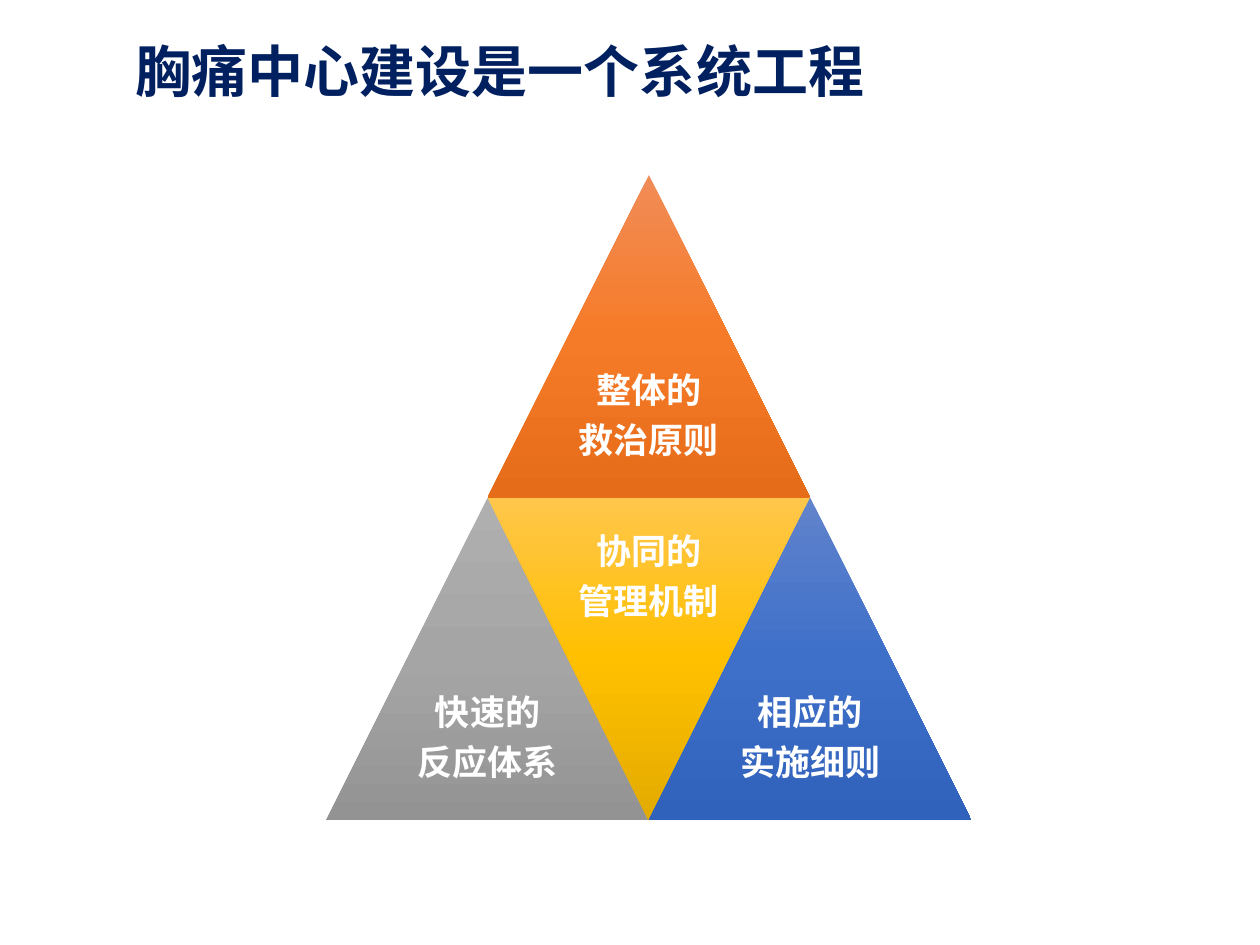
from dataclasses import dataclass

from lxml import etree
from pptx import Presentation
from pptx import util as u
from pptx.dml.color import RGBColor
from pptx.enum import shapes, text
from pptx.oxml.ns import qn


@dataclass(frozen=True)
class Theme:
    font: str = "Noto Sans CJK SC"
    title_color: str = "002060"
    label_color: str = "FFFFFF"
    title_size: int = 32
    label_size: int = 20
    line_spacing: float = 0.9
    label_inset: float = 0.08


@dataclass(frozen=True)
class Tile:
    """A triangle; column counts half tiles, row counts whole tiles."""
    lines: tuple[str, str]
    column: int
    row: int
    gradient: tuple[str, str, str]
    inverted: bool = False


THEME = Theme()
SLIDE_WIDTH, SLIDE_HEIGHT = 10, 7.5
PYRAMID_LEFT, PYRAMID_TOP = 2.59, 1.39
TILE_SIZE = 2.56
HALF = TILE_SIZE / 2

TILES = (
    Tile(("整体的", "救治原则"), 1, 0, ("F18C57", "F67B28", "E56C19")),
    Tile(("快速的", "反应体系"), 0, 1, ("AFAFAF", "A5A5A5", "939393")),
    Tile(("协同的", "管理机制"), 1, 1, ("FFC64B", "FFC000", "E3AB00"), True),
    Tile(("相应的", "实施细则"), 2, 1, ("6183CB", "3E70CA", "3062BB")),
)


def apply_format(target, values: dict) -> None:
    for name, value in values.items():
        setattr(target, name, value)


def write_run(paragraph, words: str, size: int, color: str) -> None:
    run = paragraph.add_run()
    run.text = words
    apply_format(run.font, {"name": THEME.font, "size": u.Pt(size), "bold": True})
    run.font.color.rgb = RGBColor.from_string(color)
    east_asian = etree.SubElement(run.font._element, qn("a:ea"))
    east_asian.set("typeface", THEME.font)


def add_text_box(slide, left: float, top: float, width: float, height: float):
    box = slide.shapes.add_textbox(*map(u.Inches, (left, top, width, height)))
    apply_format(box.text_frame, {
        "word_wrap": True, "vertical_anchor": text.MSO_ANCHOR.MIDDLE})
    return box.text_frame


def set_gradient(shape, colors: tuple[str, str, str]) -> None:
    """Fill from top to bottom, whatever the rotation of the shape."""
    shape.fill.gradient()
    gradient = shape._element.spPr.find(qn("a:gradFill"))
    gradient.set("rotWithShape", "0")
    for child in list(gradient):
        gradient.remove(child)
    stops = etree.SubElement(gradient, qn("a:gsLst"))
    for index, color in enumerate(colors):
        stop = etree.SubElement(stops, qn("a:gs"), pos=str(index * 50000))
        etree.SubElement(stop, qn("a:srgbClr"), val=color)
    etree.SubElement(gradient, qn("a:lin"), ang="5400000", scaled="0")


def set_percent_space_after(paragraph, percent: int) -> None:
    paragraph.space_after = u.Pt(0)
    spacing = paragraph._p.pPr.find(qn("a:spcAft"))
    spacing.remove(spacing[0])
    etree.SubElement(spacing, qn("a:spcPct"), val=str(percent * 1000))


def add_title(slide, words: str) -> None:
    frame = add_text_box(slide, 0.98, 0.21, 8.2, 0.76)
    paragraph = frame.paragraphs[0]
    paragraph.line_spacing = THEME.line_spacing
    write_run(paragraph, words, THEME.title_size, THEME.title_color)


def add_tile(slide, tile: Tile) -> None:
    left = PYRAMID_LEFT + tile.column * HALF
    top = PYRAMID_TOP + tile.row * TILE_SIZE
    triangle = slide.shapes.add_shape(
        shapes.MSO_SHAPE.ISOSCELES_TRIANGLE,
        *map(u.Inches, (left, top, TILE_SIZE, TILE_SIZE)))
    triangle.rotation = 180 if tile.inverted else 0
    triangle.shadow.inherit = False
    triangle.line.fill.background()
    set_gradient(triangle, tile.gradient)

    # The label sits in the wide half of the triangle
    label_top = top if tile.inverted else top + HALF
    frame = add_text_box(slide, left + HALF / 2, label_top, HALF, HALF)
    inset = u.Inches(THEME.label_inset)
    apply_format(frame, {f"margin_{side}": inset
                         for side in ("left", "top", "right", "bottom")})
    for index, line in enumerate(tile.lines):
        paragraph = frame.add_paragraph() if index else frame.paragraphs[0]
        apply_format(paragraph, {"alignment": text.PP_ALIGN.CENTER,
                                 "line_spacing": THEME.line_spacing})
        set_percent_space_after(paragraph, 35)
        write_run(paragraph, line, THEME.label_size, THEME.label_color)


def main() -> None:
    presentation = Presentation()
    apply_format(presentation, {"slide_width": u.Inches(SLIDE_WIDTH),
                                "slide_height": u.Inches(SLIDE_HEIGHT)})
    slide = presentation.slides.add_slide(presentation.slide_layouts[6])

    # Title
    add_title(slide, "胸痛中心建设是一个系统工程")

    # Pyramid
    for tile in TILES:
        add_tile(slide, tile)

    presentation.save("out.pptx")


if __name__ == "__main__":
    main()
